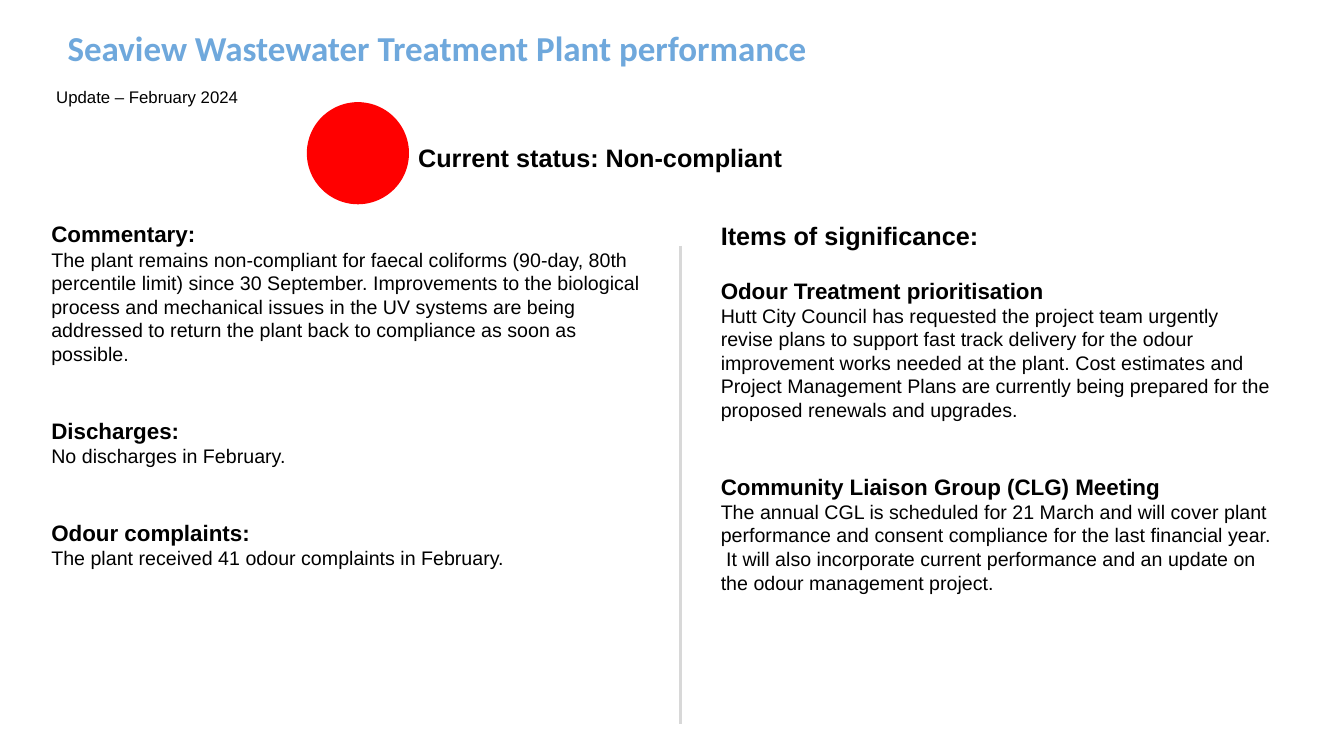
from pptx import Presentation
from pptx import util as u
from pptx.dml.color import RGBColor
from pptx.enum import shapes, text
from pptx.oxml import parse_xml
from pptx.oxml.ns import nsdecls

BLACK = RGBColor(0x00, 0x00, 0x00)
RED = RGBColor(0xFF, 0x00, 0x00)
SKY = RGBColor(0x6F, 0xA8, 0xDC)
GREY = RGBColor(0xD8, 0xD8, 0xD8)
WIDTH, HEIGHT = u.Inches(13.33), u.Inches(7.5)

COMMENTARY = [
    ("Commentary:", 16, True, 0),
    ("The plant remains non-compliant for faecal coliforms (90-day, 80th percentile limit) "
     "since 30 September. Improvements to the biological process and mechanical issues in "
     "the UV systems are being addressed to return the plant back to compliance as soon as "
     "possible.", 14, False, 0),
    ("Discharges:", 16, True, 37),
    ("No discharges in February.", 14, False, 0),
    ("Odour complaints:", 16, True, 37),
    ("The plant received 41 odour complaints in February.", 14, False, 0),
]
SIGNIFICANCE = [
    ("Items of significance:", 18, True, 0),
    ("Odour Treatment prioritisation", 16, True, 18.4),
    ("Hutt City Council has requested the project team urgently revise plans to support fast "
     "track delivery for the odour improvement works needed at the plant. Cost estimates and "
     "Project Management Plans are currently being prepared for the proposed renewals and "
     "upgrades.", 14, False, 0),
    ("Community Liaison Group (CLG) Meeting", 16, True, 37),
    ("The annual CGL is scheduled for 21 March and will cover plant performance and consent "
     "compliance for the last financial year.  It will also incorporate current performance "
     "and an update on the odour management project.", 14, False, 0),
]


def area(left, top, width, height):
    """Turn percentages of the slide into a box."""
    return (int(WIDTH * left / 100), int(HEIGHT * top / 100),
            int(WIDTH * width / 100), int(HEIGHT * height / 100))


def style(paragraph, size, bold, color=BLACK, face="Arial"):
    """Set the font of a whole paragraph."""
    font = paragraph.font
    font.name, font.size, font.bold = face, u.Pt(size), bold
    font.color.rgb = color


def add_heading(slide, box):
    """Place the slide title in the box."""
    title = slide.shapes.title
    title.left, title.top, title.width, title.height = box
    frame = title.text_frame
    frame.text = "Seaview Wastewater Treatment Plant performance"
    frame.auto_size = text.MSO_AUTO_SIZE.NONE
    frame.vertical_anchor = text.MSO_ANCHOR.TOP
    frame.margin_top = frame.margin_bottom = u.Inches(0.1)
    heading = frame.paragraphs[0]
    heading.alignment = text.PP_ALIGN.LEFT
    style(heading, 25, True, SKY, "Calibri")


def add_passages(slide, box, passages):
    """Stack passages of wording, size, weight and space before in the box."""
    frame = slide.shapes.add_textbox(*box).text_frame
    frame.word_wrap = True
    for index, (wording, size, bold, gap) in enumerate(passages):
        paragraph = frame.add_paragraph() if index else frame.paragraphs[0]
        paragraph.text = wording
        if gap:
            paragraph.space_before = u.Pt(gap)
        style(paragraph, size, bold)


def add_status(slide, box):
    """Place the status light at the left of the box and its label beside it."""
    left, top, width, height = box
    light = slide.shapes.add_shape(
        shapes.MSO_SHAPE.FLOWCHART_CONNECTOR, left, top, height, height)
    light.shadow.inherit = False
    light.fill.solid()
    light.fill.fore_color.rgb = RED
    light.line.color.rgb = RED
    light.line.width = u.Pt(1)
    label = (left + height, top + int(height * 0.34), width - height, int(height * 0.4))
    add_passages(slide, label, [("Current status: Non-compliant", 18, True, 0)])


def add_divider(slide, box):
    """Draw a vertical rule down the left edge of the box."""
    left, top, _, height = box
    divider = slide.shapes.add_connector(
        shapes.MSO_CONNECTOR.STRAIGHT, left, top, left, top + height)
    divider.line.color.rgb = GREY
    divider.line.width = u.Pt(2.25)
    divider._element.spPr.append(parse_xml(f"<a:effectLst {nsdecls('a')}/>"))


def main():
    """Build and save the plant performance slide."""
    deck = Presentation()
    deck.slide_width, deck.slide_height = WIDTH, HEIGHT
    slide = deck.slides.add_slide(deck.slide_layouts[5])
    add_heading(slide, area(4.28, 2.13, 92.95, 8.27))
    add_passages(slide, area(3.45, 10.8, 45.76, 6.67),
                 [("Update – February 2024", 12, False, 0)])
    add_status(slide, area(22.88, 13.6, 63.09, 13.33))
    add_passages(slide, area(3.08, 28.53, 46.51, 53.47), COMMENTARY)
    add_passages(slide, area(52.89, 28.53, 42.54, 71.47), SIGNIFICANCE)
    add_divider(slide, area(50.64, 32.53, 0, 63.2))
    deck.save("out.pptx")


if __name__ == "__main__":
    main()
